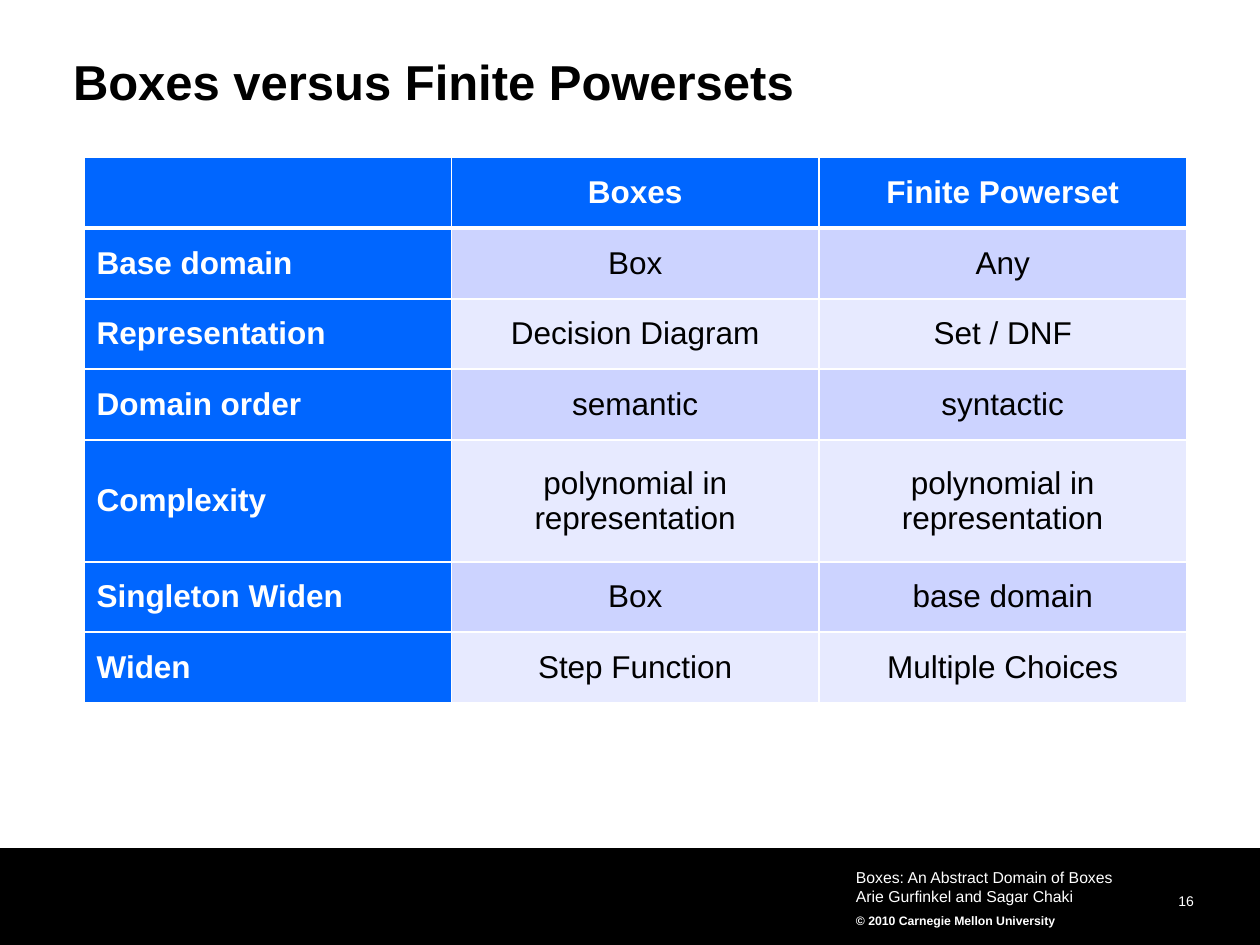
from pptx import Presentation
from pptx.dml.color import RGBColor as RGB
from pptx.enum.shapes import MSO_SHAPE as Shape
from pptx.enum.text import MSO_ANCHOR as Anchor, PP_ALIGN as Align
from pptx.oxml import parse_xml
from pptx.oxml.ns import nsdecls
from pptx.util import Emu, Pt

# Content
TITLE = "Boxes versus Finite Powersets"
ROWS = [
    ("", "Boxes", "Finite Powerset"),
    ("Base domain", "Box", "Any"),
    ("Representation", "Decision Diagram", "Set / DNF"),
    ("Domain order", "semantic", "syntactic"),
    ("Complexity", "polynomial in representation", "polynomial in representation"),
    ("Singleton Widen", "Box", "base domain"),
    ("Widen", "Step Function", "Multiple Choices"),
]
CREDITS = [
    "Boxes: An Abstract Domain of Boxes",
    "Arie Gurfinkel and Sagar Chaki",
    "© 2010 Carnegie Mellon University",
]
PAGE = "16"

# Theme and layout, lengths in px
THEME = {
    "font": "Arial", "ink": "000000", "paper": "FFFFFF", "head": "0066FF",
    "bands": ("E7EAFF", "CCD3FF"),
    "title": 28, "cell": 18, "credit": 9, "rights": 7, "page": 8,
}
WIDE, HIGH = 1260, 945
BAR_TOP = 848
COL = 367.5
HEIGHTS = (71, 71, 70, 71, 122, 70, 71)


def px(n):
    return Emu(round(n * 914400 / 126))


def box(*sides):
    return [px(n) for n in sides]


def style(par, size, color, bold=False, align=Align.LEFT):
    par.alignment = align
    for run in par.runs:
        font = run.font
        font.name, font.size, font.bold = THEME["font"], Pt(size), bold
        font.color.rgb = RGB.from_string(color)


def inset(frame, pad):
    frame.margin_left = frame.margin_right = px(pad)
    frame.margin_top = frame.margin_bottom = px(pad)
    frame.word_wrap = True


def label(sides, text, pad=0):
    frame = slide.shapes.add_textbox(*box(*sides)).text_frame
    inset(frame, pad)
    frame.vertical_anchor = Anchor.MIDDLE
    frame.text = text
    return frame.paragraphs


def border(cell, under):
    props = cell._tc.get_or_add_tcPr()
    widths = {"lnL": 1, "lnR": 1, "lnT": 1, "lnB": under}
    for spot, (side, width) in enumerate(widths.items()):
        props.insert(spot, parse_xml(
            f'<a:{side} {nsdecls("a")} w="{Pt(width)}"><a:solidFill>'
            f'<a:srgbClr val="{THEME["paper"]}"/></a:solidFill></a:{side}>'))


deck = Presentation()
deck.slide_width, deck.slide_height = box(WIDE, HIGH)
slide = deck.slides.add_slide(deck.slide_layouts[5])

# Footer bar
bar = slide.shapes.add_shape(Shape.RECTANGLE, *box(0, BAR_TOP, WIDE, HIGH - BAR_TOP))
bar.shadow.inherit = False
bar.fill.solid()
bar.fill.fore_color.rgb = RGB.from_string(THEME["ink"])
bar.line.fill.background()

# Page number and credits
num = label((1078, 886, 116, 23), PAGE)[0]
num.line_spacing = Pt(13)
style(num, THEME["page"], THEME["paper"], align=Align.RIGHT)
*lines, rights = label((850, 861, 315, 73), "\n".join(CREDITS), pad=6)
for line in lines:
    style(line, THEME["credit"], THEME["paper"])
rights.line_spacing = 1.5
style(rights, THEME["rights"], THEME["paper"], bold=True)

# Title
title = slide.shapes.title
title.left, title.top, title.width, title.height = box(73, 58, 1124, 53)
frame = title.text_frame
inset(frame, 0)
frame.vertical_anchor = Anchor.TOP
frame.text = TITLE
frame.paragraphs[0].line_spacing = 0.9
style(frame.paragraphs[0], THEME["title"], THEME["ink"], bold=True)

# Comparison table
cols = len(ROWS[0])
table = slide.shapes.add_table(
    len(ROWS), cols, *box(84, 157, COL * cols, sum(HEIGHTS))).table
for col in table.columns:
    col.width = px(COL)
for r, (row, high) in enumerate(zip(ROWS, HEIGHTS)):
    table.rows[r].height = px(high)
    for c, text in enumerate(row):
        cell = table.cell(r, c)
        head = r == 0 or c == 0
        cell.text = text
        cell.vertical_anchor = Anchor.MIDDLE
        cell.fill.solid()
        fill = THEME["head"] if head else THEME["bands"][r % 2]
        cell.fill.fore_color.rgb = RGB.from_string(fill)
        border(cell, 3 if r == 0 else 1)
        style(cell.text_frame.paragraphs[0], THEME["cell"],
              THEME["paper" if head else "ink"], head,
              Align.CENTER if c else Align.LEFT)

deck.save("out.pptx")
